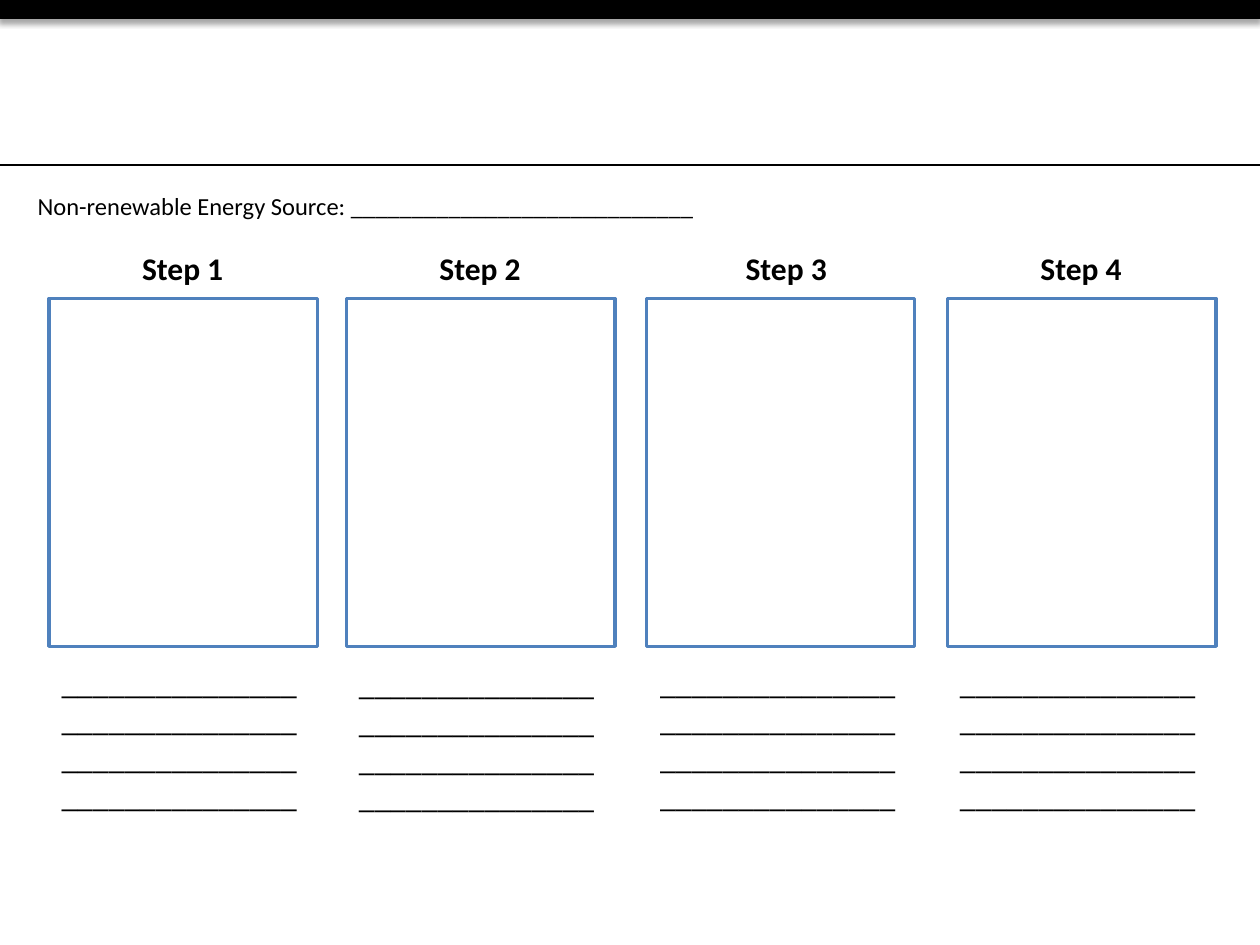
from typing import NamedTuple

import pptx
import pptx.dml.color
import pptx.enum.shapes
import pptx.enum.text
import pptx.oxml
import pptx.oxml.ns
import pptx.util
from pptx.util import Inches

COLORS = {"ink": "000000", "paper": "FFFFFF", "frame": "4F81BD"}
BODY = {"name": "Calibri", "size": pptx.util.Pt(14)}
HEADING = {"name": "Calibri", "size": pptx.util.Pt(18), "bold": True}
WRITING = {"name": "Calibri", "size": pptx.util.Pt(18)}
LEFT = pptx.enum.text.PP_ALIGN.LEFT
CENTER = pptx.enum.text.PP_ALIGN.CENTER


class Box(NamedTuple):
    left: float
    top: float
    width: float
    height: float


class Step(NamedTuple):
    title: str
    frame_left: float
    title_left: float
    writing_left: float
    writing_top: float


STEPS = [
    Step("Step 1", 0.39, 0.78, 0.39, 5.21),
    Step("Step 2", 2.75, 3.14, 2.75, 5.22),
    Step("Step 3", 5.13, 5.57, 5.14, 5.21),
    Step("Step 4", 7.52, 7.91, 7.52, 5.21),
]


def rgb(color: str) -> pptx.dml.color.RGBColor:
    return pptx.dml.color.RGBColor.from_string(COLORS[color])


def add_rectangle(slide, box: Box, fill: str, line: str, weight: float):
    rectangle = slide.shapes.add_shape(
        pptx.enum.shapes.MSO_SHAPE.RECTANGLE, *map(Inches, box))
    rectangle.shadow.inherit = False
    rectangle.fill.solid()
    rectangle.fill.fore_color.rgb = rgb(fill)
    rectangle.line.color.rgb = rgb(line)
    rectangle.line.width = pptx.util.Pt(weight)
    return rectangle


def add_text(slide, box: Box, text: str, style: dict, align=LEFT) -> None:
    frame = slide.shapes.add_textbox(*map(Inches, box)).text_frame
    frame.word_wrap = True
    frame.auto_size = pptx.enum.text.MSO_AUTO_SIZE.SHAPE_TO_FIT_TEXT
    paragraph = frame.paragraphs[0]
    paragraph.alignment = align
    run = paragraph.add_run()
    run.text = text
    for attribute, value in style.items():
        setattr(run.font, attribute, value)
    run.font.color.rgb = rgb("ink")


def add_header(slide) -> None:
    bar = add_rectangle(slide, Box(-0.01, 0, 10.01, 0.15), "ink", "ink", 0.75)
    effects = bar._element.spPr.find(pptx.oxml.ns.qn("a:effectLst"))
    effects.append(pptx.oxml.parse_xml(
        f'<a:outerShdw {pptx.oxml.ns.nsdecls("a")} blurRad="{pptx.util.Pt(3.1)}" '
        f'dist="{pptx.util.Pt(1.8)}" dir="5400000" rotWithShape="0">'
        f'<a:srgbClr val="{COLORS["ink"]}"><a:alpha val="35000"/></a:srgbClr>'
        '</a:outerShdw>'))

    rule = slide.shapes.add_connector(
        pptx.enum.shapes.MSO_CONNECTOR.STRAIGHT,
        *map(Inches, (-0.01, 1.31, 10.01, 1.31)))
    rule.line.color.rgb = rgb("ink")
    rule.line.width = pptx.util.Pt(1.5)
    rule._element.spPr.append(pptx.oxml.parse_xml(
        f'<a:effectLst {pptx.oxml.ns.nsdecls("a")}/>'))


def add_step(slide, step: Step) -> None:
    """Draw the drawing frame, its title and four writing lines."""
    add_rectangle(slide, Box(step.frame_left, 2.37, 2.13, 2.76),
                  "paper", "frame", 2)
    add_text(slide, Box(step.title_left, 1.93, 1.34, 0.4),
             step.title, HEADING, CENTER)
    add_text(slide, Box(step.writing_left, step.writing_top, 2.13, 1.31),
             "_" * 60, WRITING)


def main() -> None:
    deck = pptx.Presentation()
    deck.slide_width, deck.slide_height = Inches(10), Inches(7.5)
    slide = deck.slides.add_slide(deck.slide_layouts[6])
    add_header(slide)
    add_text(slide, Box(0.2, 1.47, 6.54, 0.34),
             "Non-renewable Energy Source: " + "_" * 28, BODY)
    for step in STEPS:
        add_step(slide, step)
    deck.save("out.pptx")


if __name__ == "__main__":
    main()
